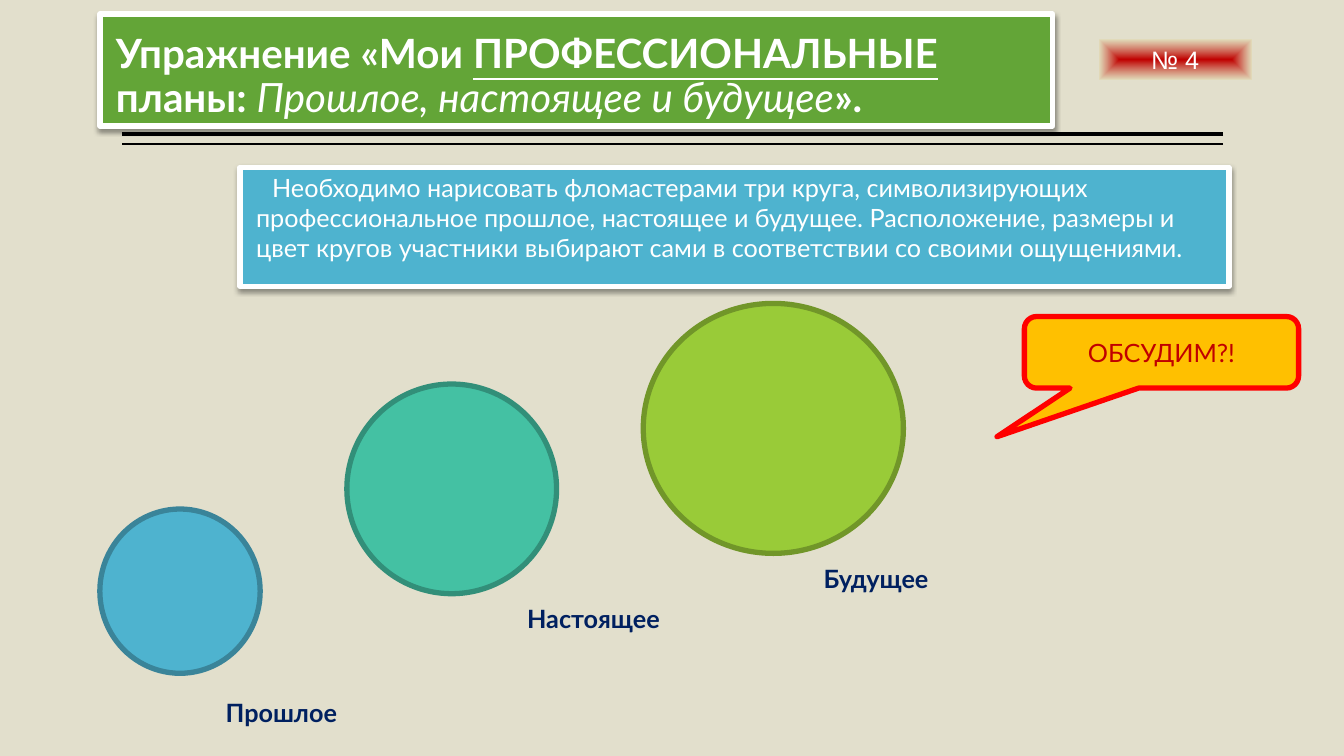
from dataclasses import dataclass

from lxml.etree import SubElement
from pptx import Presentation
from pptx.dml.color import RGBColor
from pptx.enum.shapes import MSO_CONNECTOR, MSO_SHAPE
from pptx.enum.text import MSO_ANCHOR, MSO_AUTO_SIZE, PP_ALIGN
from pptx.oxml import parse_xml
from pptx.oxml.ns import nsdecls, qn
from pptx.util import Inches, Pt


@dataclass(frozen=True)
class Theme:
    background: str = "E2DFCC"
    white: str = "FFFFFF"
    black: str = "000000"
    green: str = "63A537"
    blue: str = "4EB3CF"
    blue_edge: str = "3A8499"
    teal: str = "44C1A3"
    teal_edge: str = "328F79"
    lime: str = "99CB38"
    lime_edge: str = "719629"
    navy: str = "002060"
    amber: str = "FFC000"
    red: str = "FF0000"
    dark_red: str = "C00000"
    sand: str = "E2DDB8"
    font: str = "Lato"
    badge_font: str = "Arial"
    title_size: float = 28.8
    text_size: float = 18
    frame: float = 3.82
    outline: float = 3.78


THEME = Theme()


def color(value):
    return RGBColor.from_string(value)


def add_span(para, text, ink, size=THEME.text_size, font=THEME.font,
             bold=False, italic=False, underline=False):
    span = para.add_run()
    span.text = text
    span.font.name = font
    span.font.size = Pt(size)
    span.font.color.rgb = color(ink)
    span.font.bold = bold
    span.font.italic = italic
    span.font.underline = underline


def add_outlined(page, kind, box, fill, edge, width=THEME.outline):
    shape = page.shapes.add_shape(kind, *map(Inches, box))
    shape.shadow.inherit = False
    shape.fill.solid()
    shape.fill.fore_color.rgb = color(fill)
    shape.line.color.rgb = color(edge)
    shape.line.width = Pt(width)
    return shape


def add_panel(page, box, fill, anchor, first_indent):
    panel = add_outlined(page, MSO_SHAPE.RECTANGLE, box, fill, THEME.white, THEME.frame)
    effects = panel._element.spPr.find(qn("a:effectLst"))
    shadow = SubElement(effects, qn("a:outerShdw"), blurRad=str(Pt(3.5)),
                        dist=str(Pt(2)), dir="5400000", rotWithShape="0")
    tone = SubElement(shadow, qn("a:srgbClr"), val=THEME.black)
    SubElement(tone, qn("a:alpha"), val="38000")
    frame = panel.text_frame
    frame.word_wrap = True
    frame.vertical_anchor = anchor
    frame.margin_left = frame.margin_right = 0
    para = frame.paragraphs[0]
    para.alignment = PP_ALIGN.LEFT
    properties = para._p.get_or_add_pPr()
    properties.set("marL", str(Inches(0.16)))
    properties.set("indent", str(Inches(first_indent)))
    return para


def add_title(page, box):
    para = add_panel(page, box, THEME.green, MSO_ANCHOR.BOTTOM, 0)
    para.line_spacing = 0.9
    for text, style in (
        ("Упражнение «Мои ", {"bold": True}),
        ("ПРОФЕССИОНАЛЬНЫЕ", {"bold": True, "underline": True}),
        (" планы: ", {"bold": True}),
        ("Прошлое, настоящее и будущее", {"italic": True}),
        ("».", {"bold": True}),
    ):
        add_span(para, text, THEME.white, THEME.title_size, **style)


def add_instruction(page, box):
    para = add_panel(page, box, THEME.blue, MSO_ANCHOR.TOP, 0.16)
    add_span(para, "Необходимо нарисовать фломастерами три круга, символизирующих "
                   "профессиональное прошлое, настоящее и будущее. Расположение, размеры и "
                   "цвет кругов участники выбирают сами в соответствии со своими ощущениями.",
             THEME.white)


def add_double_rule(page, box):
    left, top, width, gap = box
    for y, weight in ((top, 3), (top + gap, 1)):
        rule = page.shapes.add_connector(MSO_CONNECTOR.STRAIGHT, Inches(left + width),
                                         Inches(y), Inches(left), Inches(y))
        rule.line.color.rgb = color(THEME.black)
        rule.line.width = Pt(weight)
        SubElement(rule._element.spPr, qn("a:effectLst"))


def add_badge(page, box):
    badge = page.shapes.add_shape(MSO_SHAPE.RECTANGLE, *map(Inches, box))
    badge.shadow.inherit = False
    badge.line.fill.background()
    gradient = parse_xml(
        f'<a:gradFill {nsdecls("a")} rotWithShape="1"><a:gsLst>'
        f'<a:gs pos="0"><a:srgbClr val="{THEME.dark_red}"/></a:gs>'
        f'<a:gs pos="100000"><a:srgbClr val="{THEME.sand}"><a:alpha val="80000"/>'
        '</a:srgbClr></a:gs></a:gsLst><a:path path="rect">'
        '<a:fillToRect l="50000" t="50000" r="50000" b="50000"/></a:path></a:gradFill>')
    badge._element.spPr.find(qn("a:prstGeom")).addnext(gradient)
    frame = badge.text_frame
    frame.word_wrap = True
    frame.vertical_anchor = MSO_ANCHOR.TOP
    frame.auto_size = MSO_AUTO_SIZE.SHAPE_TO_FIT_TEXT
    para = frame.paragraphs[0]
    para.alignment = PP_ALIGN.CENTER
    add_span(para, "№ 4", THEME.white, font=THEME.badge_font)


def add_stage(page, box, fill, edge, label, label_box):
    add_outlined(page, MSO_SHAPE.OVAL, box, fill, edge)
    caption = page.shapes.add_textbox(*map(Inches, label_box))
    frame = caption.text_frame
    frame.word_wrap = False
    frame.auto_size = MSO_AUTO_SIZE.SHAPE_TO_FIT_TEXT
    add_span(frame.paragraphs[0], label, THEME.navy, bold=True)


def add_callout(page, box):
    callout = add_outlined(page, MSO_SHAPE.ROUNDED_RECTANGULAR_CALLOUT, box,
                           THEME.amber, THEME.red)
    for index, value in enumerate((-0.6, 1.18, 0.17)):
        callout.adjustments[index] = value
    frame = callout.text_frame
    frame.word_wrap = True
    frame.vertical_anchor = MSO_ANCHOR.MIDDLE
    para = frame.paragraphs[0]
    para.alignment = PP_ALIGN.CENTER
    add_span(para, "ОБСУДИМ?!", THEME.dark_red)


def main():
    deck = Presentation()
    deck.slide_width, deck.slide_height = Inches(13.33), Inches(7.5)
    page = deck.slides.add_slide(deck.slide_layouts[6])
    page.background.fill.solid()
    page.background.fill.fore_color.rgb = color(THEME.background)

    add_double_rule(page, (1.21, 1.33, 10.92, 0.1))
    add_instruction(page, (2.38, 1.66, 9.81, 1.18))
    add_title(page, (0.99, 0.14, 9.45, 1.11))
    add_badge(page, (10.9, 0.39, 1.51, 0.4))
    for stage in (
        ((0.99, 5.05, 1.59, 1.63), THEME.blue, THEME.blue_edge,
         "Прошлое", (2.14, 6.87, 1.35, 0.4)),
        ((3.44, 3.81, 2.08, 2.08), THEME.teal, THEME.teal_edge,
         "Настоящее", (5.13, 5.94, 1.58, 0.4)),
        ((6.38, 3.01, 2.58, 2.48), THEME.lime, THEME.lime_edge,
         "Будущее", (8.07, 5.54, 1.31, 0.4)),
    ):
        add_stage(page, *stage)
    add_callout(page, (10.16, 3.14, 2.72, 0.71))
    deck.save("out.pptx")


if __name__ == "__main__":
    main()
